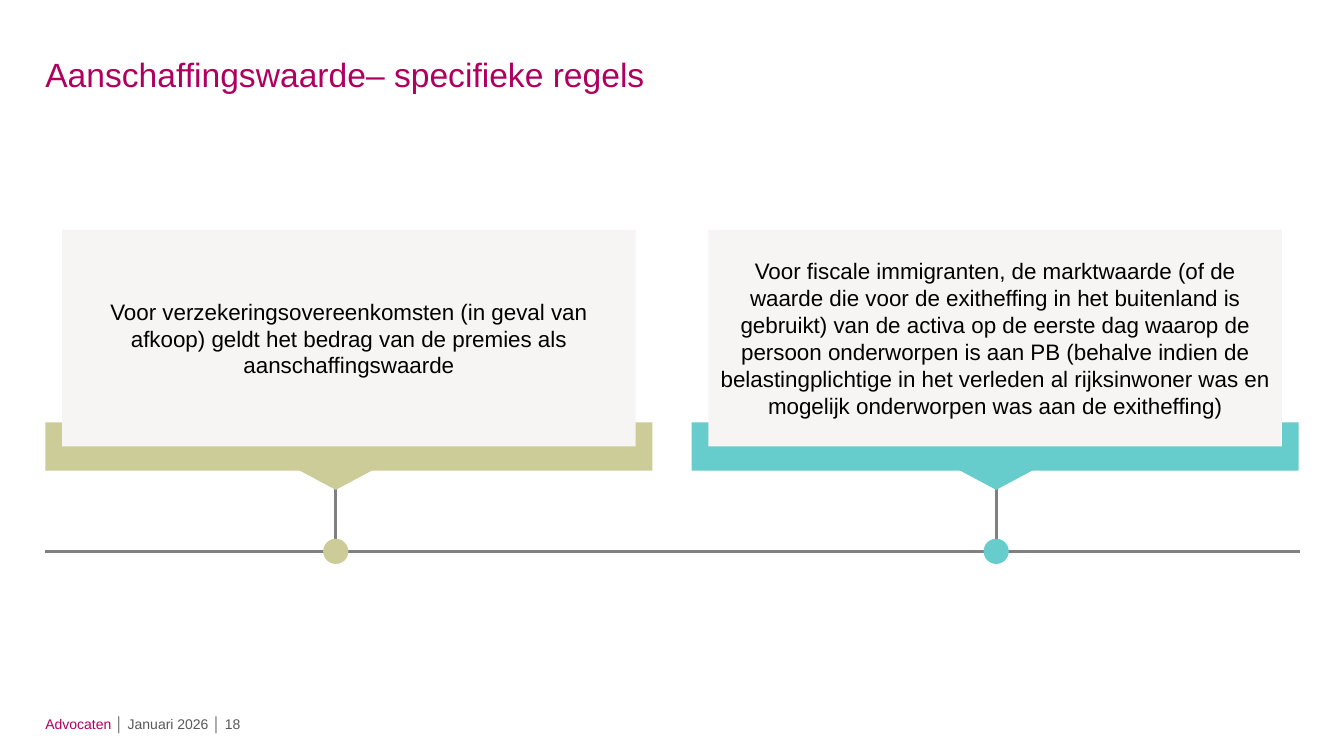
"""Build the slide with two specific rules for the acquisition value."""
from lxml import etree
from pptx import Presentation
from pptx.dml.color import RGBColor
from pptx.enum.shapes import MSO_CONNECTOR, MSO_SHAPE
from pptx.enum.text import MSO_ANCHOR, PP_ALIGN
from pptx.oxml.ns import qn
from pptx.util import Inches, Pt

RECT, DOT, TIP = MSO_SHAPE.RECTANGLE, MSO_SHAPE.OVAL, MSO_SHAPE.FLOWCHART_MERGE
LEFT, MID = PP_ALIGN.LEFT, PP_ALIGN.CENTER
PINK, GREY, PALE, BLACK = "AF005F", "808080", "F6F5F3", "000000"

TITLE = "Aanschaffingswaarde– specifieke regels"
FOOTER = [("Advocaten ", PINK), ("│ Januari 2026 │ 18", "595959")]
RULES = [
    {"text": "Voor verzekeringsovereenkomsten (in geval van afkoop) geldt het "
             "bedrag van de premies als aanschaffingswaarde",
     "left": 0.45, "stem": 3.33, "color": "CCCC99"},
    {"text": "Voor fiscale immigranten, de marktwaarde (of de waarde die voor de "
             "exitheffing in het buitenland is gebruikt) van de activa op de "
             "eerste dag waarop de persoon onderworpen is aan PB (behalve indien "
             "de belastingplichtige in het verleden al rijksinwoner was en "
             "mogelijk onderworpen was aan de exitheffing)",
     "left": 6.86, "stem": 9.88, "color": "66CCCC"},
]

EDGE, SPAN = 0.45, 12.44
BAR_TOP, BAR_W, BAR_H = 4.19, 6.02, 0.48
CARD_TOP, CARD_W, CARD_H = 2.28, 5.69, 2.15
TIP_TOP, TIP_W, TIP_H = 4.66, 0.75, 0.2
AXIS, SIZE = 5.47, 0.25

deck = Presentation()
deck.slide_width, deck.slide_height = Inches(13.33), Inches(7.5)
slide = deck.slides.add_slide(deck.slide_layouts[6])
shapes = slide.shapes


def rgb(code):
    return RGBColor.from_string(code)


def write(shape, runs, size=16, align=LEFT, inset=(0.1, 0.05, 0.1, 0.05), wrap=True):
    frame = shape.text_frame
    frame.word_wrap = wrap
    frame.vertical_anchor = MSO_ANCHOR.MIDDLE
    (frame.margin_left, frame.margin_top,
     frame.margin_right, frame.margin_bottom) = map(Inches, inset)
    para = frame.paragraphs[0]
    para.alignment = align
    for text, color in runs:
        run = para.add_run()
        run.text = text
        run.font.name, run.font.size = "Arial", Pt(size)
        run.font.color.rgb = rgb(color)


def box(*place):
    return shapes.add_textbox(*map(Inches, place))


def block(kind, color, *place):
    shape = shapes.add_shape(kind, *map(Inches, place))
    shape.shadow.inherit = False
    shape.fill.solid()
    shape.fill.fore_color.rgb = rgb(color)
    shape.line.fill.background()
    return shape


def rule(*ends):
    line = shapes.add_connector(MSO_CONNECTOR.STRAIGHT, *map(Inches, ends))
    line.line.color.rgb = rgb(GREY)
    line.line.width = Pt(2)
    etree.SubElement(line._element.spPr, qn("a:effectLst"))


write(box(EDGE, 7.05, 3.39, 0.22), FOOTER, size=10, inset=(0, 0.05, 0.1, 0), wrap=False)
write(box(EDGE, 0.41, SPAN, 0.66), [(TITLE, PINK)], size=24, inset=(0, 0.05, 0.1, 0.05))

rule(EDGE, AXIS, EDGE + SPAN, AXIS)
for item in RULES:
    left, stem, color = item["left"], item["stem"], item["color"]
    top = AXIS - SIZE / 2
    rule(stem, TIP_TOP, stem, top)
    block(RECT, color, left, BAR_TOP, BAR_W, BAR_H)
    card = block(RECT, PALE, left + (BAR_W - CARD_W) / 2, CARD_TOP, CARD_W, CARD_H)
    write(card, [(item["text"], BLACK)], align=MID)
    block(TIP, color, stem - TIP_W / 2, TIP_TOP, TIP_W, TIP_H)
    block(DOT, color, stem - SIZE / 2, top, SIZE, SIZE)

deck.save("out.pptx")
